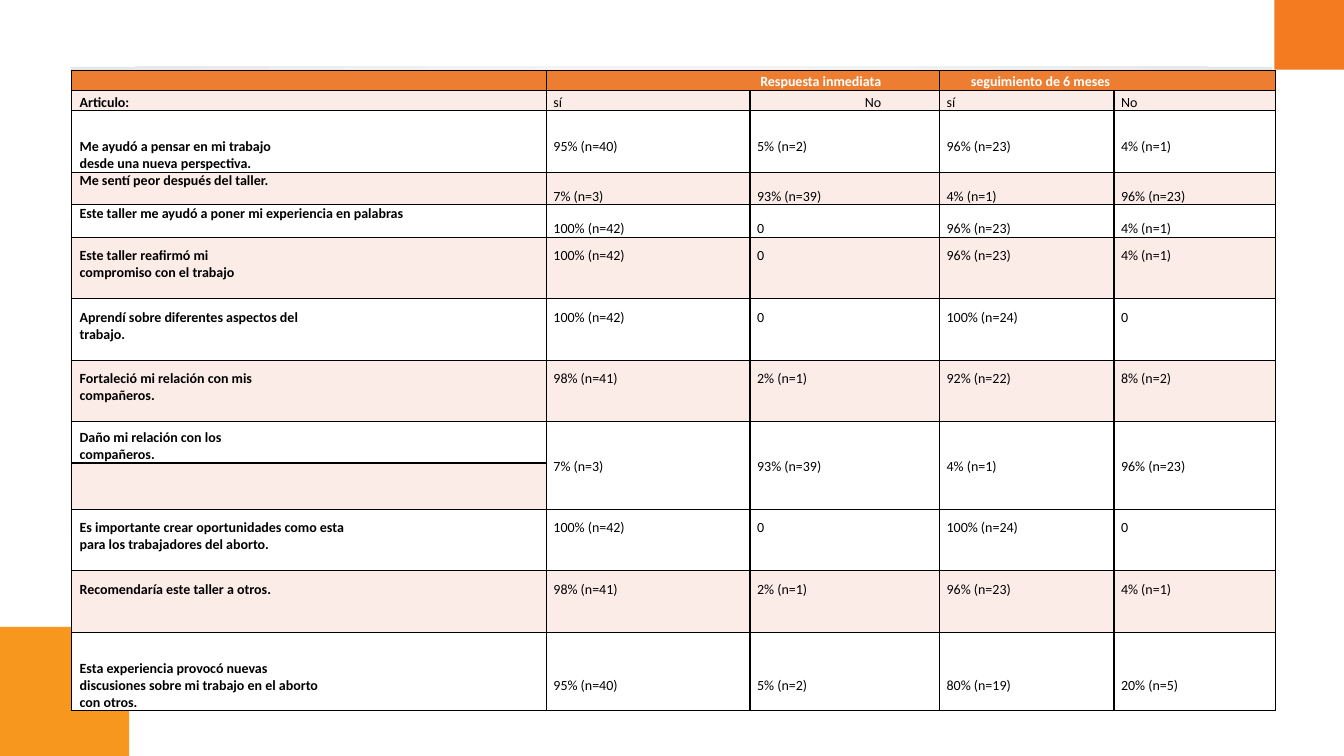
from lxml.etree import SubElement
from pptx import Presentation
from pptx.dml.color import RGBColor
from pptx.enum.shapes import MSO_SHAPE
from pptx.enum.text import MSO_ANCHOR, PP_ALIGN
from pptx.oxml.ns import qn
from pptx.util import Inches, Pt

LINE = 0.17
COLUMN_WIDTHS = [4.71, 2.02, 1.88, 1.73, 1.6]
HEADER = ["", "Respuesta inmediata", "", "seguimiento de 6 meses", ""]
SUBHEADER = ["Articulo:", "sí", "No", "sí", "No"]
# Each answer row: height, label, values, lines below the label, lines below the values.
ANSWERS = [
    (0.61, "Me ayudó a pensar en mi trabajo\ndesde una nueva perspectiva.",
     ["95% (n=40)", "5% (n=2)", "96% (n=23)", "4% (n=1)"], 0, 1),
    (0.32, "Me sentí peor después del taller.",
     ["7% (n=3)", "93% (n=39)", "4% (n=1)", "96% (n=23)"], 0.9, 0),
    (0.32, "Este taller me ayudó a poner mi experiencia en palabras",
     ["100% (n=42)", "0", "96% (n=23)", "4% (n=1)"], 0.9, 0),
    (0.61, "Este taller reafirmó mi\ncompromiso con el trabajo",
     ["100% (n=42)", "0", "96% (n=23)", "4% (n=1)"], 1, 2),
    (0.61, "Aprendí sobre diferentes aspectos del\ntrabajo.",
     ["100% (n=42)", "0", "100% (n=24)", "0"], 1, 2),
    (0.61, "Fortaleció mi relación con mis\ncompañeros.",
     ["98% (n=41)", "2% (n=1)", "92% (n=22)", "8% (n=2)"], 1, 2),
    (0.41, "Daño mi relación con los\ncompañeros.",
     ["7% (n=3)", "93% (n=39)", "4% (n=1)", "96% (n=23)"], 0, 2),
    (0.46, "", ["", "", "", ""], 0, 0),
    (0.61, "Es importante crear oportunidades como esta\npara los trabajadores del aborto.",
     ["100% (n=42)", "0", "100% (n=24)", "0"], 1, 2),
    (0.61, "Recomendaría este taller a otros.",
     ["98% (n=41)", "2% (n=1)", "96% (n=23)", "4% (n=1)"], 2, 2),
    (0.78, "Esta experiencia provocó nuevas\ndiscusiones sobre mi trabajo en el aborto\ncon otros.",
     ["95% (n=40)", "5% (n=2)", "80% (n=19)", "20% (n=5)"], 0, 1),
]


def color(value):
    """Turn a hex string into a colour."""
    return RGBColor.from_string(value)


def set_attributes(target, values):
    """Set every attribute named in a dict."""
    for name, value in values.items():
        setattr(target, name, value)


def add_block(slide, left, top, width, height, fill):
    """Add a plain filled rectangle."""
    shape = slide.shapes.add_shape(
        MSO_SHAPE.RECTANGLE, *map(Inches, (left, top, width, height)))
    shape.shadow.inherit = False
    shape.fill.solid()
    shape.fill.fore_color.rgb = color(fill)
    shape.line.fill.background()
    return shape


def add_background(slide, width, height):
    """Place the corner squares and the shaded panel."""
    add_block(slide, width - 0.69, 0, 0.69, 0.69, "F47B20")
    add_block(slide, 0, height - 1.28, 1.28, 1.28, "F8971D")
    panel = add_block(slide, 0.7, 0.66, 11.92, 6.19, "FFFFFF")
    panel.fill.gradient()
    for stop, value in zip(panel.fill.gradient_stops, ("FFFFFF", "E6E7E8")):
        stop.color.rgb = color(value)
    gradient = panel.fill._xPr.find(qn("a:gradFill"))
    gradient.remove(gradient.find(qn("a:lin")))
    circle = SubElement(gradient, qn("a:path"), {"path": "circle"})
    SubElement(circle, qn("a:fillToRect"), dict.fromkeys("ltrb", "50000"))


def add_borders(cell):
    """Draw a one-point black line on each side of a cell."""
    properties = cell._tc.get_or_add_tcPr()
    for side in ("lnL", "lnR", "lnT", "lnB"):
        border = SubElement(properties, qn(f"a:{side}"), {"w": str(Pt(1))})
        fill = SubElement(border, qn("a:solidFill"))
        SubElement(fill, qn("a:srgbClr"), {"val": "000000"})


def write_cell(cell, text, fill, bold, text_color="000000", left=0.07,
               right=0, below=0, align=PP_ALIGN.LEFT):
    """Fill a cell and write its lines, leaving room below them."""
    add_borders(cell)
    cell.fill.solid()
    cell.fill.fore_color.rgb = color(fill)
    set_attributes(cell, {
        "margin_left": Inches(left), "margin_right": Inches(right),
        "margin_top": 0, "margin_bottom": Inches(below * LINE),
        "vertical_anchor": MSO_ANCHOR.BOTTOM})
    for index, line in enumerate(text.split("\n")):
        frame = cell.text_frame
        paragraph = frame.add_paragraph() if index else frame.paragraphs[0]
        paragraph.alignment = align
        if line:
            run = paragraph.add_run()
            run.text = line
            set_attributes(run.font, {"name": "Calibri", "size": Pt(10), "bold": bold})
            run.font.color.rgb = color(text_color)
        else:
            SubElement(paragraph._p, qn("a:endParaRPr"), {"sz": "1000"})


def write_headings(table):
    """Write the two heading rows and join the group headings."""
    right_aligned = {"right": 0.58, "align": PP_ALIGN.RIGHT}
    header_formats = {1: right_aligned, 3: {"left": 0.31}}
    subheader_formats = {0: {"left": 0.08}, 2: right_aligned}
    for column, (group, answer) in enumerate(zip(HEADER, SUBHEADER)):
        write_cell(table.cell(0, column), group, "ED7D31", True, "FFFFFF",
                   **header_formats.get(column, {}))
        write_cell(table.cell(1, column), answer, "FCECE8", column == 0,
                   **subheader_formats.get(column, {}))
    for column in (1, 3):
        table.cell(0, column).merge(table.cell(0, column + 1))


def add_survey_table(slide, left, top):
    """Place the survey table with its headings and answers."""
    heights = [0.2, 0.2] + [answer[0] for answer in ANSWERS]
    table = slide.shapes.add_table(
        len(heights), len(COLUMN_WIDTHS), Inches(left), Inches(top),
        Inches(sum(COLUMN_WIDTHS)), Inches(sum(heights))).table
    for column, width in zip(table.columns, COLUMN_WIDTHS):
        column.width = Inches(width)
    for row, height in zip(table.rows, heights):
        row.height = Inches(height)
    write_headings(table)
    for row, (_, label, values, label_below, value_below) in enumerate(ANSWERS, 2):
        fill = "FCECE8" if row % 2 else "FFFFFF"
        write_cell(table.cell(row, 0), label, fill, True, left=0.08, below=label_below)
        for column, value in enumerate(values, 1):
            write_cell(table.cell(row, column), value, fill, False, below=value_below)
            if not label:
                table.cell(row - 1, column).merge(table.cell(row, column))


def main():
    """Build and save the slide."""
    presentation = Presentation()
    set_attributes(presentation, {"slide_width": Inches(13.33), "slide_height": Inches(7.5)})
    slide = presentation.slides.add_slide(presentation.slide_layouts[6])
    add_background(slide, 13.33, 7.5)
    add_survey_table(slide, 0.71, 0.7)
    presentation.save("out.pptx")


if __name__ == "__main__":
    main()
